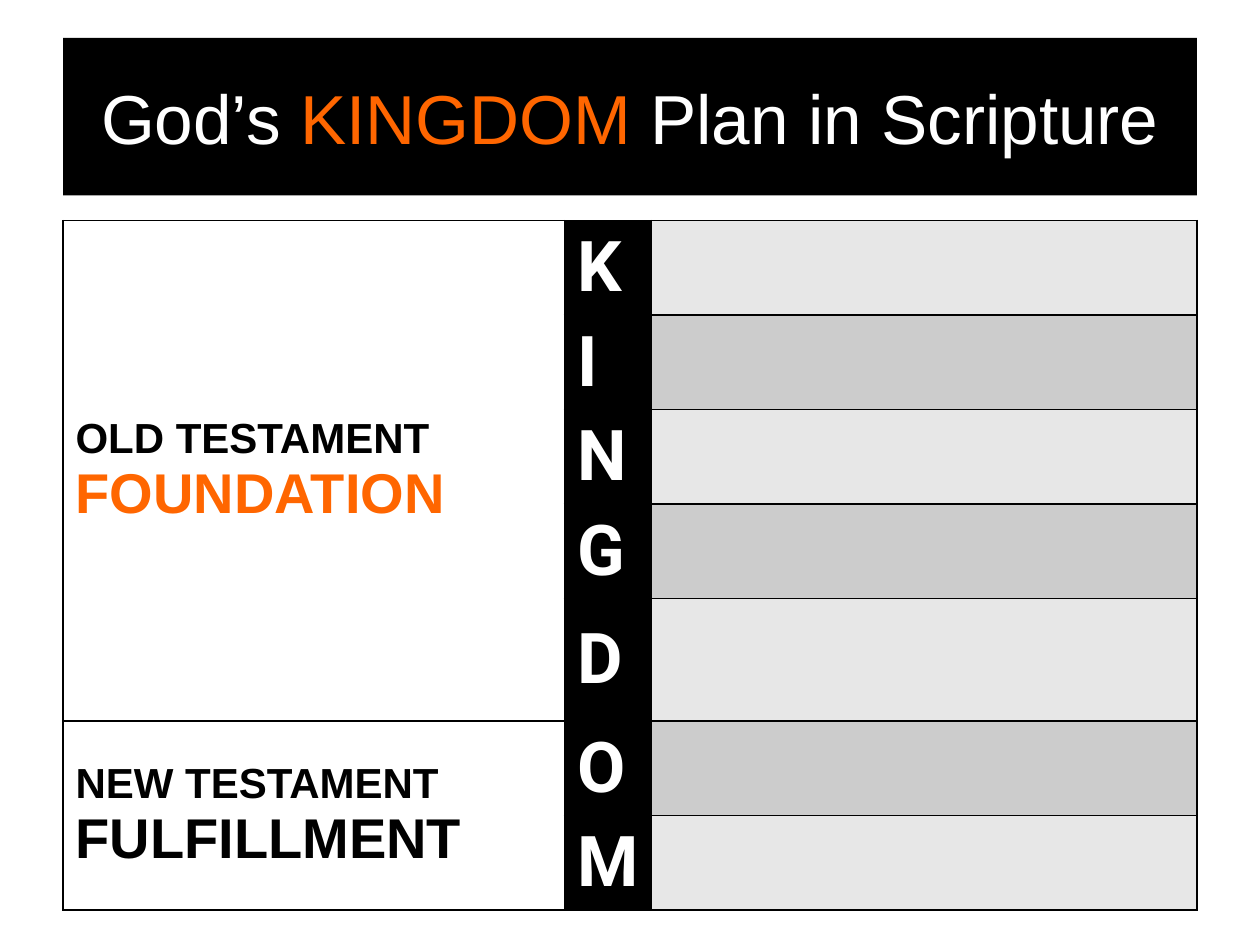
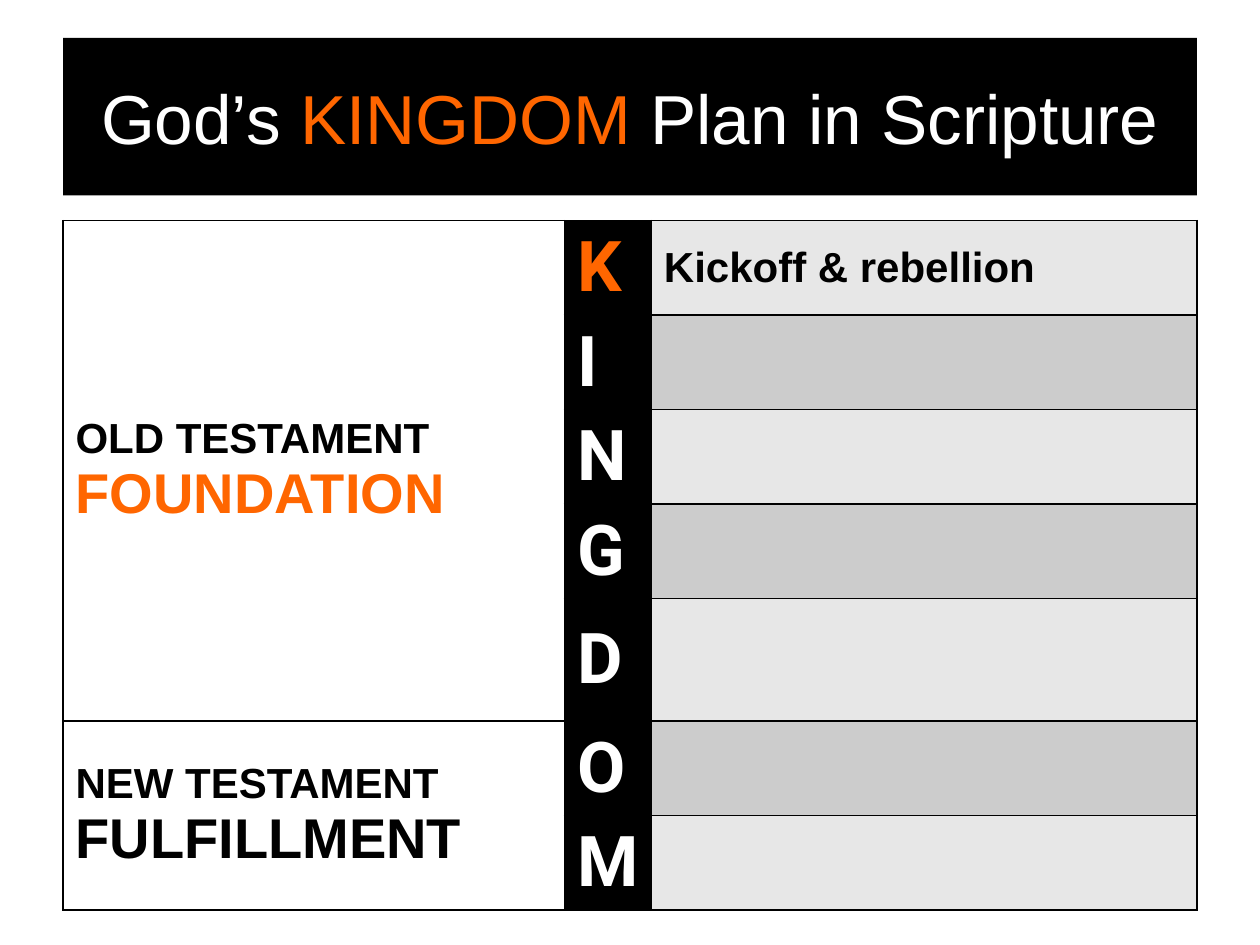
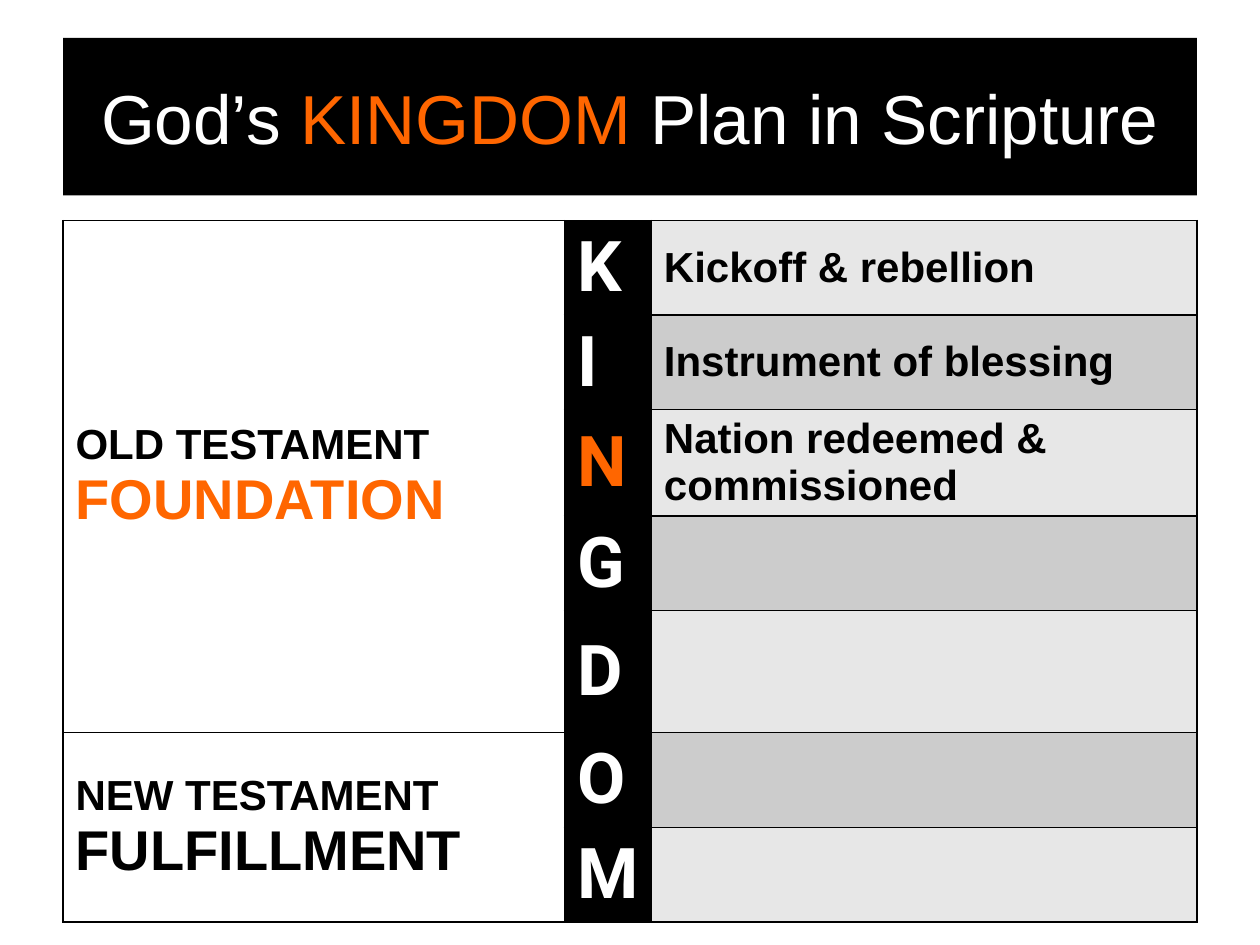
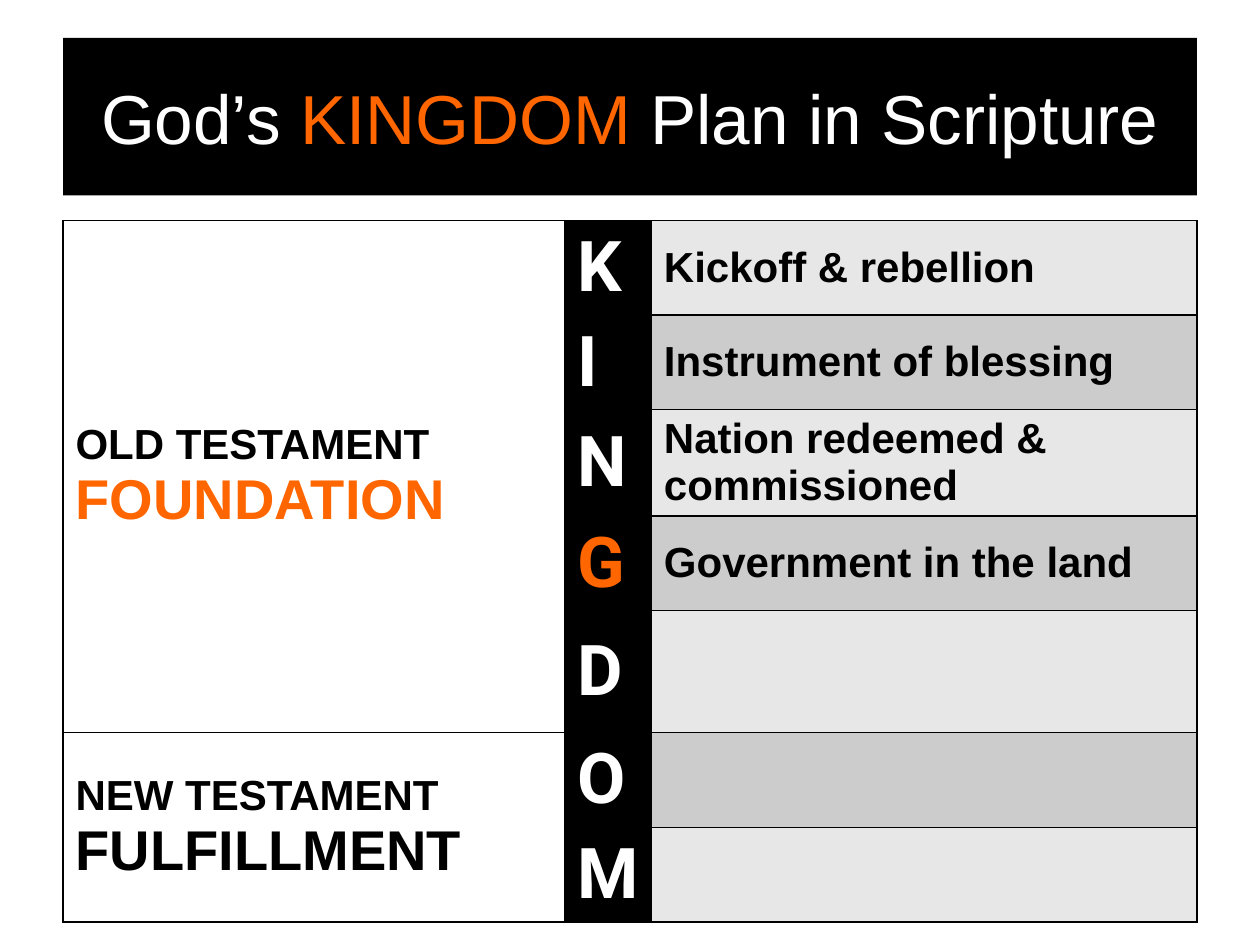
from lxml.etree import SubElement
from pptx import Presentation
from pptx.dml.color import RGBColor
from pptx.enum.text import MSO_ANCHOR, MSO_AUTO_SIZE, PP_ALIGN
from pptx.oxml.ns import qn
from pptx.util import Pt

SCALE = 9144
BLACK, WHITE, ORANGE = "000000", "FFFFFF", "FF6600"
BANDS = ("E7E7E7", "CCCCCC")
LETTERS = "KINGDOM"
COLUMN_WIDTHS = (398, 69, 433)
ROW_HEIGHT, LAST_OLD_ROW_HEIGHT = 41, 97
OLD_ROWS = 5
TITLE = (("God’s ", WHITE), ("KINGDOM ", ORANGE), ("Plan in Scripture", WHITE))
TESTAMENTS = (
    (0, OLD_ROWS - 1, "OLD TESTAMENT ", "FOUNDATION", ORANGE),
    (OLD_ROWS, len(LETTERS) - 1, "NEW TESTAMENT ", "FULFILLMENT", BLACK),
)
TOPICS = (
    "Kickoff & rebellion",
    "Instrument of blessing",
    "Nation redeemed & commissioned",
    "Government in the land",
)
STEPS = ((0, None, 537), (1, "K", 537), (3, "N", 550), (4, "G", 550))


def px(length):
    """Turn px into EMU."""
    return length * SCALE


def color(value):
    """Turn a hex string into a colour."""
    return RGBColor.from_string(value)


class KingdomDeck:
    """Hold the deck style and the current slide."""

    def __init__(self):
        """Start an empty deck."""
        self.deck = Presentation()
        self.deck.slide_width, self.deck.slide_height = px(1000), px(750)
        self.page = None

    def add_page(self):
        """Add a title-only slide."""
        self.page = self.deck.slides.add_slide(self.deck.slide_layouts[5])

    def add_span(self, para, text, size, fill, font="Arial", bold=True):
        """Add one formatted run to a paragraph."""
        span = para.add_run()
        span.text = text
        span.font.name, span.font.size, span.font.bold = font, Pt(size), bold
        span.font.color.rgb = color(fill)

    def add_title(self):
        """Format the title placeholder as a black band."""
        box = self.page.shapes.title
        box.left, box.top, box.width, box.height = px(50), px(30), px(900), px(125)
        box.fill.solid()
        box.fill.fore_color.rgb = color(BLACK)
        frame = box.text_frame
        frame.auto_size, frame.word_wrap = MSO_AUTO_SIZE.NONE, True
        frame.vertical_anchor = MSO_ANCHOR.MIDDLE
        para = frame.paragraphs[0]
        para.alignment = PP_ALIGN.CENTER
        for text, fill in TITLE:
            self.add_span(para, text, 39.6, fill, bold=False)

    def style_cell(self, cell, fill):
        """Fill, anchor and border one cell."""
        cell.vertical_anchor = MSO_ANCHOR.MIDDLE
        properties = cell._tc.get_or_add_tcPr()
        for side in ("a:lnL", "a:lnR", "a:lnT", "a:lnB"):
            line = SubElement(properties, qn(side), w=str(Pt(1)))
            solid = SubElement(line, qn("a:solidFill"))
            SubElement(solid, qn("a:srgbClr"), val=BLACK)
        cell.fill.solid()
        cell.fill.fore_color.rgb = color(fill)

    def add_plan_table(self, topic_count, current_letter, height):
        """Add the plan table with its revealed topics."""
        frame = self.page.shapes.add_table(
            len(LETTERS), len(COLUMN_WIDTHS), px(50), px(175), px(900), px(height)
        )
        table = frame.table
        table.first_row = table.horz_banding = False
        for column, width in zip(table.columns, COLUMN_WIDTHS):
            column.width = px(width)
        for index, letter in enumerate(LETTERS):
            last_old = index == OLD_ROWS - 1
            table.rows[index].height = px(LAST_OLD_ROW_HEIGHT if last_old else ROW_HEIGHT)
            for column, fill in enumerate((WHITE, BLACK, BANDS[index % 2])):
                self.style_cell(table.cell(index, column), fill)
            para = table.cell(index, 1).text_frame.paragraphs[0]
            letter_color = ORANGE if letter == current_letter else WHITE
            self.add_span(para, letter, 40, letter_color, font="Roboto")
        for index, topic in enumerate(TOPICS[:topic_count]):
            self.add_span(table.cell(index, 2).text_frame.paragraphs[0], topic, 24, BLACK)
        for first, last, name, role, role_color in TESTAMENTS:
            cell = table.cell(first, 0)
            cell.merge(table.cell(last, 0))
            para = cell.text_frame.paragraphs[0]
            self.add_span(para, name, 24, BLACK)
            self.add_span(para, role, 32, role_color)
        frame.height = px(height)


def main():
    """Build and save the four slides."""
    kingdom = KingdomDeck()
    for step in STEPS:
        kingdom.add_page()
        kingdom.add_title()
        kingdom.add_plan_table(*step)
    kingdom.deck.save("out.pptx")


if __name__ == "__main__":
    main()
